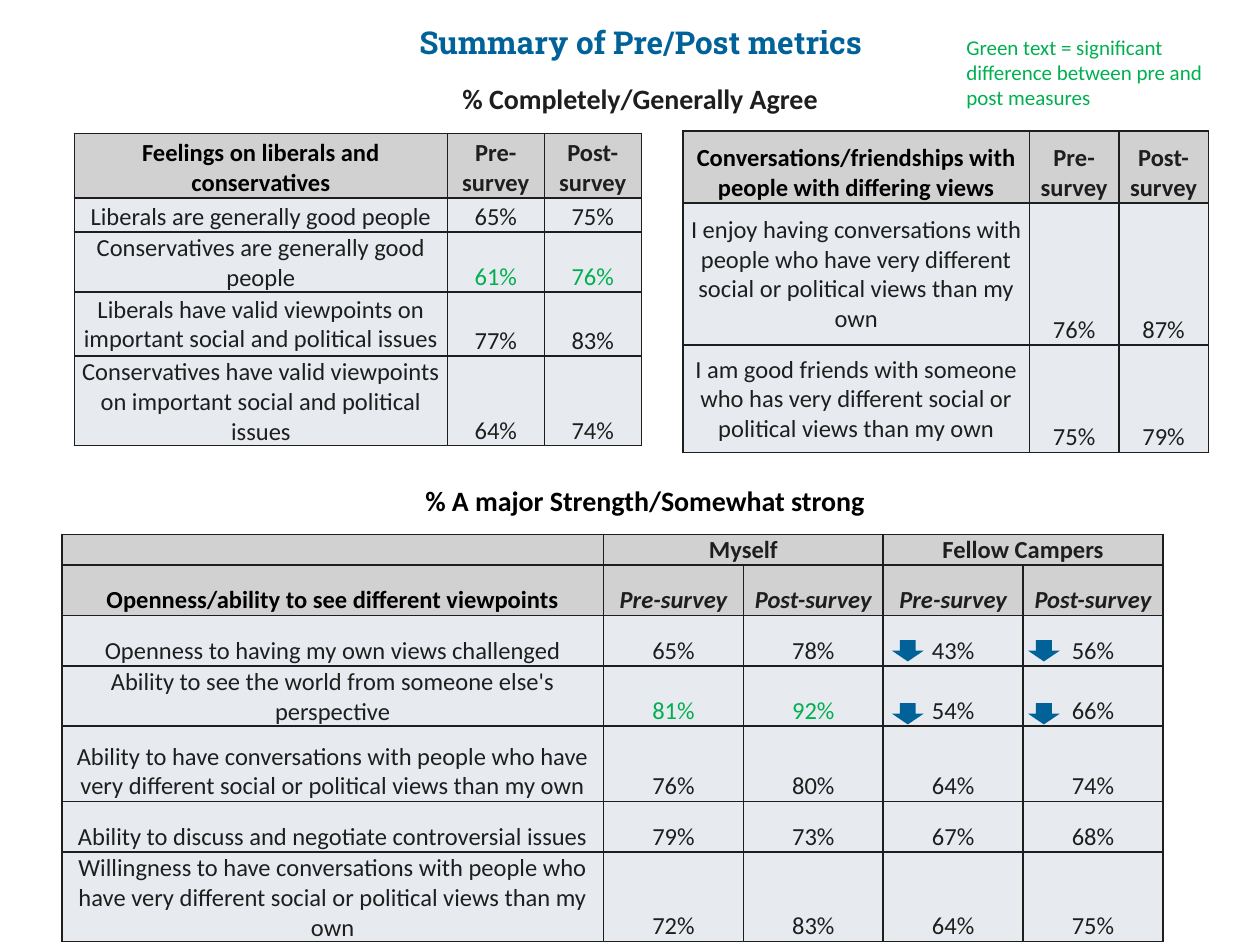
from lxml import etree
from pptx import Presentation
from pptx.dml.color import RGBColor
from pptx.enum.shapes import MSO_SHAPE
from pptx.enum.text import MSO_ANCHOR as ANCHOR, PP_ALIGN as ALIGN
from pptx.oxml.ns import qn
from pptx.util import Inches, Pt

COLORS = {
    "blue": "006298",
    "green": "00B050",
    "ink": "1E1E1E",
    "black": "000000",
    "header": "D1D1D1",
    "body": "E7EAEF",
    "white": "FFFFFF",
}


def rgb(name):
    return RGBColor.from_string(COLORS[name])


class MetricsSlide:
    font = "Calibri"
    cell_size = 14

    def __init__(self, prs):
        self.s = prs.slides.add_slide(prs.slide_layouts[6])
        fill = self.s.background.fill
        fill.solid()
        fill.fore_color.rgb = rgb("white")

    def run(self, p, text, size, color, bold=False, italic=False, font=None):
        r = p.add_run()
        r.text = text
        r.font.name = font or self.font
        r.font.size = Pt(size)
        r.font.bold = bold
        r.font.italic = italic
        r.font.color.rgb = rgb(color)

    def text(self, box, text, size, color, bold=False, font=None,
             align=ALIGN.LEFT, inset=(0, 0), wrap=True):
        tf = self.s.shapes.add_textbox(*map(Inches, box)).text_frame
        tf.word_wrap = wrap
        tf.margin_left = tf.margin_right = Inches(inset[0])
        tf.margin_top = tf.margin_bottom = Inches(inset[1])
        p = tf.paragraphs[0]
        p.alignment = align
        self.run(p, text, size, color, bold, font=font)

    def down_arrow(self, left, top):
        sp = self.s.shapes.add_shape(MSO_SHAPE.DOWN_ARROW, Inches(left),
                                     Inches(top), Inches(0.25), Inches(0.17))
        sp.shadow.inherit = False
        sp.fill.solid()
        sp.fill.fore_color.rgb = rgb("blue")
        sp.line.fill.background()

    def borders(self, cell):
        tcPr = cell._tc.get_or_add_tcPr()
        for i, side in enumerate(("lnL", "lnR", "lnT", "lnB")):
            ln = etree.Element(qn(f"a:{side}"), w=str(Pt(1)))
            fill = etree.SubElement(ln, qn("a:solidFill"))
            etree.SubElement(fill, qn("a:srgbClr"), val=COLORS["ink"])
            tcPr.insert(i, ln)

    def cell(self, cell, text, fill, anchor, **style):
        cell.fill.solid()
        cell.fill.fore_color.rgb = rgb(fill)
        self.borders(cell)
        cell.vertical_anchor = anchor
        cell.margin_left = cell.margin_right = cell.margin_top = Inches(0.01)
        cell.margin_bottom = 0
        p = cell.text_frame.paragraphs[0]
        p.alignment = ALIGN.CENTER
        if text:
            self.run(p, text, self.cell_size, **style)
        else:
            # Keeps an empty cell from forcing a taller row
            etree.SubElement(p._p, qn("a:endParaRPr"),
                             sz=str(self.cell_size * 100))

    def table(self, left, top, cols, heights, rows, header_rows=1,
              middle=(), green=(), spans=()):
        frame = self.s.shapes.add_table(
            len(rows), len(cols), Inches(left), Inches(top),
            Inches(sum(cols)), Inches(sum(heights)))
        tbl = frame.table
        tbl.first_row = tbl.horz_banding = False
        for col, width in zip(tbl.columns, cols):
            col.width = Inches(width)
        for row, height in zip(tbl.rows, heights):
            row.height = Inches(height)
        for i, row in enumerate(rows):
            head = i < header_rows
            for j, text in enumerate(row):
                if (i, j) in green:
                    color = "green"
                else:
                    color = "black" if head and j == 0 else "ink"
                mid = i in middle and j == 0
                self.cell(tbl.cell(i, j), text,
                          "header" if head else "body",
                          ANCHOR.MIDDLE if mid else ANCHOR.BOTTOM,
                          color=color, bold=head,
                          italic=i == 1 and head and j > 0)
        for first, last in spans:
            tbl.cell(*first).merge(tbl.cell(*last))


def main():
    prs = Presentation()
    prs.slide_width, prs.slide_height = Inches(10), Inches(7.5)
    slide = MetricsSlide(prs)
    survey = ["Pre-survey", "Post-survey"]

    # Title
    slide.text((0.75, 0.13, 8.67, 0.7), "Summary of Pre/Post metrics", 18,
               "blue", True, "Roboto Slab", ALIGN.CENTER, (0.1, 0.05))

    # Feelings table
    slide.table(0.59, 1.06, [2.96, 0.77, 0.77],
                [0.51, 0.27, 0.27, 0.51, 0.51], [
        ["Feelings on liberals and conservatives", *survey],
        ["Liberals are generally good people", "65%", "75%"],
        ["Conservatives are generally good people", "61%", "76%"],
        ["Liberals have valid viewpoints on important social and political "
         "issues", "77%", "83%"],
        ["Conservatives have valid viewpoints on important social and "
         "political issues", "64%", "74%"],
    ], middle=(3, 4), green=((2, 1), (2, 2)))
    slide.text((3.67, 0.65, 3.42, 0.27), "% Completely/Generally Agree", 16,
               "ink", True)

    # Strengths table
    slide.table(0.49, 4.24, [4.3] + [1.11] * 4,
                [0.2, 0.4, 0.4, 0.4, 0.6, 0.4, 0.6], [
        ["", "Myself", "", "Fellow Campers", ""],
        ["Openness/ability to see different viewpoints", *survey * 2],
        ["Openness to having my own views challenged",
         "65%", "78%", "43%", "56%"],
        ["Ability to see the world from someone else's perspective",
         "81%", "92%", "54%", "66%"],
        ["Ability to have conversations with people who have very different "
         "social or political views than my own",
         "76%", "80%", "64%", "74%"],
        ["Ability to discuss and negotiate controversial issues",
         "79%", "73%", "67%", "68%"],
        ["Willingness to have conversations with people who have very "
         "different social or political views than my own",
         "72%", "83%", "64%", "75%"],
    ], header_rows=2, green=((3, 1), (3, 2)),
        spans=(((0, 1), (0, 2)), ((0, 3), (0, 4))))
    slide.text((3.25, 3.79, 3.74, 0.37), "% A major Strength/Somewhat strong",
               16, "black", True, align=ALIGN.CENTER, inset=(0.1, 0.05),
               wrap=False)

    # Conversations table
    slide.table(5.42, 1.04, [2.75, 0.71, 0.71], [0.57, 1.13, 0.85], [
        ["Conversations/friendships with people with differing views",
         *survey],
        ["I enjoy having conversations with people who have very different "
         "social or political views than my own", "76%", "87%"],
        ["I am good friends with someone who has very different social or "
         "political views than my own", "75%", "79%"],
    ], middle=(1, 2))

    # Arrows beside the lower camper ratings
    for left in (7.08, 8.16):
        for top in (5.08, 5.58):
            slide.down_arrow(left, top)

    # Colour key
    slide.text((7.67, 0.27, 2.17, 0.61), "Green text = significant "
               "difference between pre and post measures", 12, "green")

    prs.save("out.pptx")


if __name__ == "__main__":
    main()
